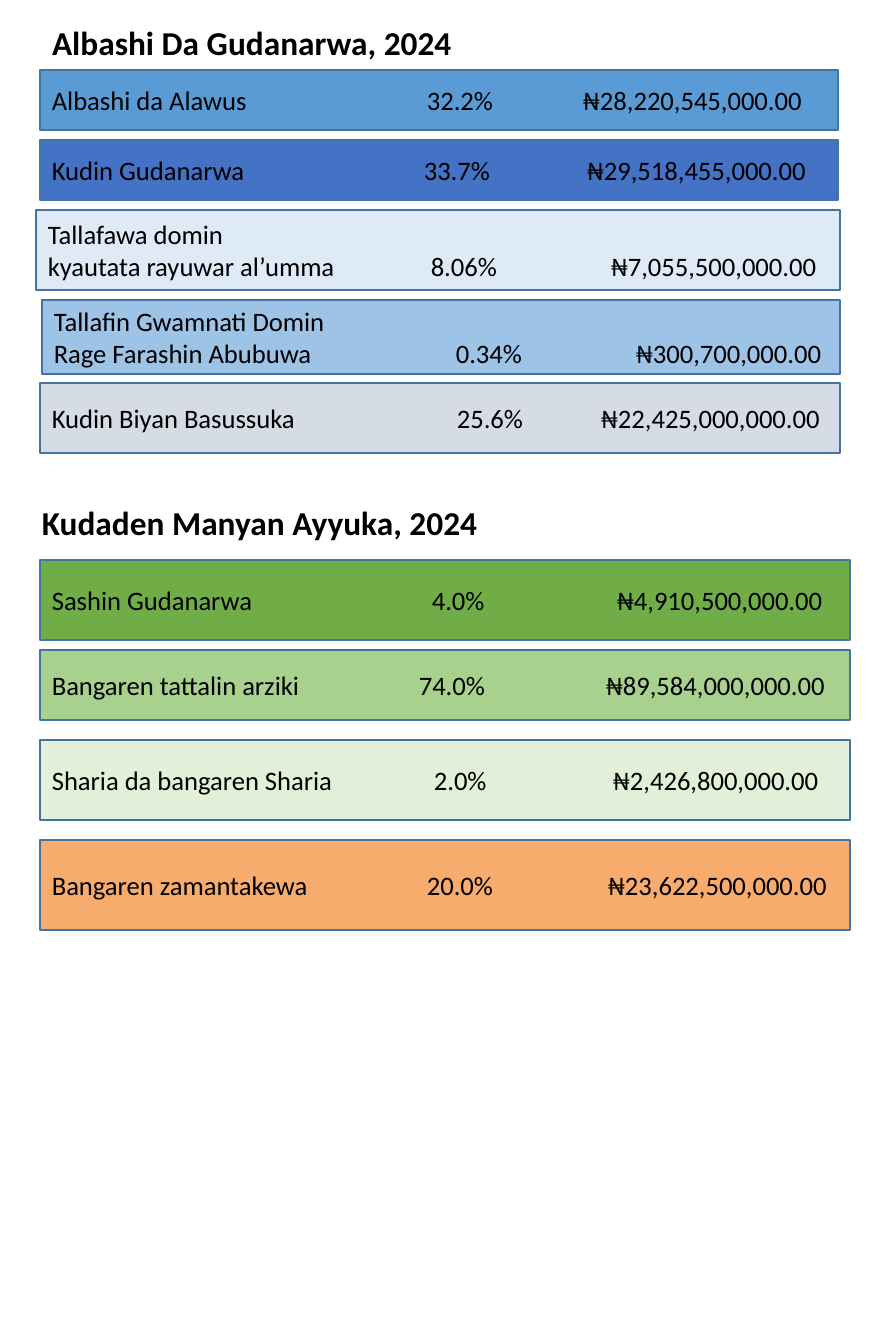
"""Build the 2024 recurrent and capital spending slide."""
from lxml import etree
from pptx import Presentation
from pptx import util as u
from pptx.dml.color import RGBColor
from pptx.enum import shapes, text
from pptx.oxml.ns import qn

PX = u.Inches(1) // 120
INSET = 12
THEME = {
    "font": "Calibri", "title_size": 20, "row_size": 16,
    "ink": "000000", "border": "43739E",
    "blue": "5B9BD5", "royal": "4472C4", "ice": "DEEBF7", "sky": "9DC3E6", "grey": "D6DCE5",
    "green": "70AD47", "leaf": "A9D18E", "mint": "E2F0D9", "orange": "F7AB6D",
}


def prepare_frame(shape):
    """Give a shape's text frame its insets, wrapping and anchor."""
    frame = shape.text_frame
    frame.word_wrap = True
    frame.auto_size = text.MSO_AUTO_SIZE.NONE
    frame.vertical_anchor = text.MSO_ANCHOR.MIDDLE
    frame.margin_left = frame.margin_right = INSET * PX
    frame.margin_top = frame.margin_bottom = 0
    return frame


def add_run(paragraph, words, size, bold=False):
    """Add one left-aligned run in the theme font."""
    paragraph.alignment = text.PP_ALIGN.LEFT
    run = paragraph.add_run()
    run.text = words
    run.font.name = THEME["font"]
    run.font.size = u.Pt(size)
    run.font.bold = bold
    run.font.color.rgb = RGBColor.from_string(THEME["ink"])


presentation = Presentation()
presentation.slide_width = 888 * PX
presentation.slide_height = 1344 * PX
slide = presentation.slides.add_slide(presentation.slide_layouts[5])

capital_heading = slide.shapes.add_textbox(0, 0, 0, 0)
headings = [
    (slide.shapes.title, (40, 13, 450, 58), "Albashi Da Gudanarwa, 2024"),
    (capital_heading, (30, 480, 470, 84), "Kudaden Manyan Ayyuka, 2024"),
]
for heading, box, words in headings:
    heading.left, heading.top, heading.width, heading.height = [side * PX for side in box]
    add_run(prepare_frame(heading).paragraphs[0], words, THEME["title_size"], True)

rows = [
    ((40, 70, 798, 60), "blue", ["Albashi da Alawus"], (427, "32.2%"), (583, "₦28,220,545,000.00")),
    ((40, 140, 798, 60), "royal", ["Kudin Gudanarwa"], (424, "33.7%"), (587, "₦29,518,455,000.00")),
    ((36, 210, 804, 80), "ice", ["Tallafawa domin", "kyautata rayuwar al’umma"],
     (431, "8.06%"), (611, "₦7,055,500,000.00")),
    ((42, 300, 798, 74), "sky", ["Tallafin Gwamnati Domin", "Rage Farashin Abubuwa"],
     (456, "0.34%"), (636, "₦300,700,000.00")),
    ((40, 383, 800, 70), "grey", ["Kudin Biyan Basussuka"], (457, "25.6%"), (601, "₦22,425,000,000.00")),
    ((40, 560, 810, 80), "green", ["Sashin Gudanarwa"], (432, "4.0%"), (617, "₦4,910,500,000.00")),
    ((40, 650, 810, 70), "leaf", ["Bangaren tattalin arziki"], (419, "74.0%"), (606, "₦89,584,000,000.00")),
    ((40, 740, 810, 80), "mint", ["Sharia da bangaren Sharia"], (434, "2.0%"), (613, "₦2,426,800,000.00")),
    ((40, 840, 810, 90), "orange", ["Bangaren zamantakewa"], (427, "20.0%"), (608, "₦23,622,500,000.00")),
]
for box, colour, label_lines, share, amount in rows:
    bar = slide.shapes.add_shape(shapes.MSO_SHAPE.RECTANGLE, *[side * PX for side in box])
    bar.shadow.inherit = False
    bar.fill.solid()
    bar.fill.fore_color.rgb = RGBColor.from_string(THEME[colour])
    bar.line.color.rgb = RGBColor.from_string(THEME["border"])
    bar.line.width = u.Pt(1)
    frame = prepare_frame(bar)
    for index, line in enumerate(label_lines):
        paragraph = frame.paragraphs[0] if index == 0 else frame.add_paragraph()
        add_run(paragraph, line, THEME["row_size"])
    tab_list = etree.SubElement(paragraph._p.get_or_add_pPr(), qn("a:tabLst"))
    for column_left, value in (share, amount):
        position = (column_left - box[0] - INSET) * PX
        etree.SubElement(tab_list, qn("a:tab"), pos=str(position), algn="l")
        add_run(paragraph, "\t" + value, THEME["row_size"])

presentation.save("out.pptx")
